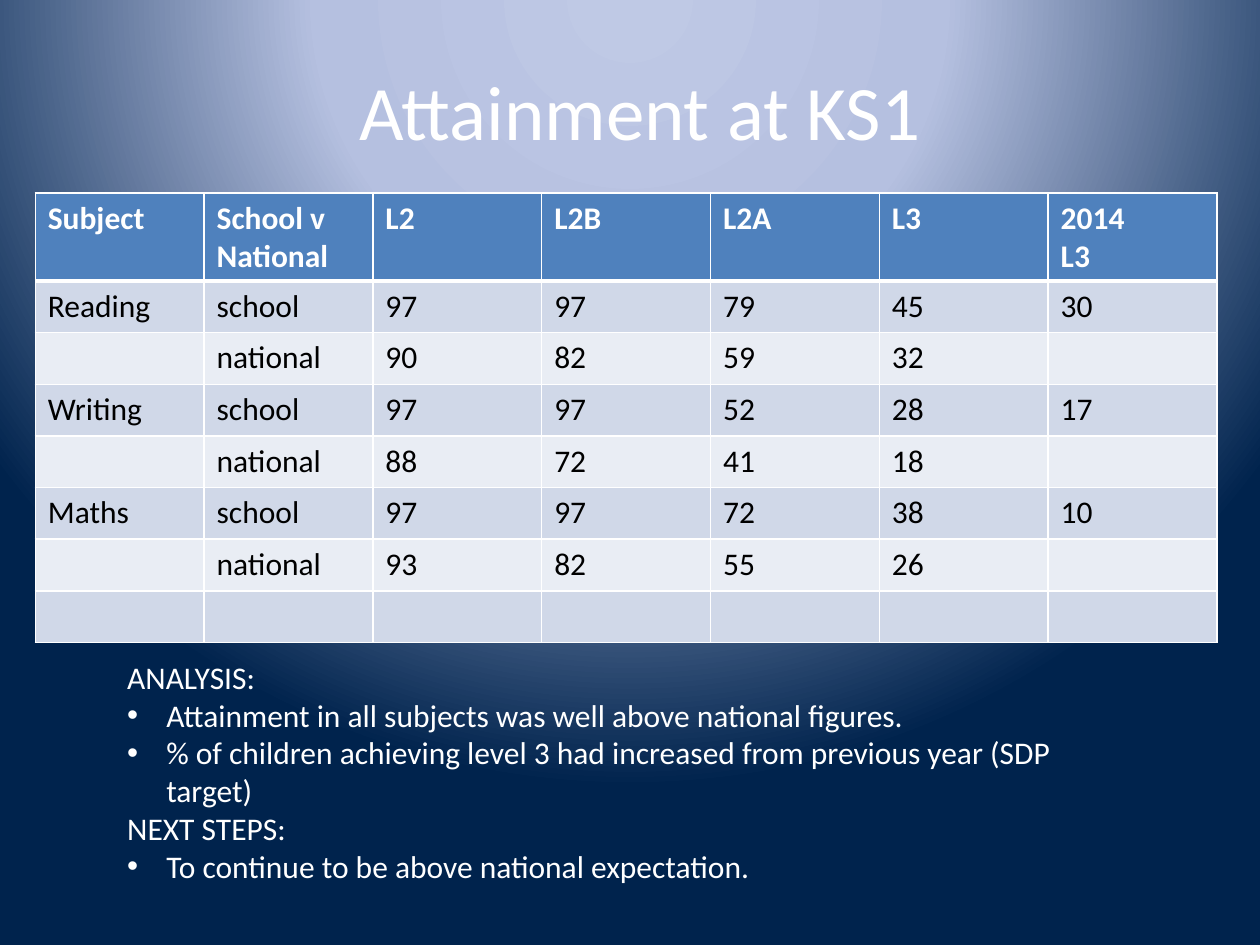
from lxml import etree
from pptx import Presentation
from pptx.dml.color import RGBColor
from pptx.enum import text
from pptx.oxml import parse_xml
from pptx.oxml.ns import nsdecls, qn
from pptx.util import Inches, Pt

COLORS = {
    "white": "FFFFFF", "black": "000000", "header": "4F81BD",
    "band_dark": "D0D8E8", "band_light": "E9EDF4",
    "glow": "BFC9E5", "mid": "B5C0E0", "navy": "00234D",
}

HEADER = ["Subject", "School v National", "L2", "L2B", "L2A", "L3", "2014\nL3"]
RESULTS = [
    ["Reading", "school", "97", "97", "79", "45", "30"],
    ["", "national", "90", "82", "59", "32", ""],
    ["Writing", "school", "97", "97", "52", "28", "17"],
    ["", "national", "88", "72", "41", "18", ""],
    ["Maths", "school", "97", "97", "72", "38", "10"],
    ["", "national", "93", "82", "55", "26", ""],
    [""] * 7,
]
NOTES = [
    ("ANALYSIS:", False),
    ("Attainment in all subjects was well above national figures.", True),
    ("% of children achieving level 3 had increased from previous year "
     "(SDP target)", True),
    ("NEXT STEPS:", False),
    ("To continue to be above national expectation.", True),
]


def write(p, words, size=18, color="white", bold=False, align=None, font="Calibri"):
    """Add one formatted run to a paragraph."""
    if align is not None:
        p.alignment = align
    r = p.add_run()
    r.text = words
    r.font.name, r.font.size, r.font.bold = font, Pt(size), bold
    r.font.color.rgb = RGBColor.from_string(COLORS[color])


def paragraphs(tf, count):
    """Yield the first paragraph of a text frame, then new ones."""
    for i in range(count):
        yield tf.add_paragraph() if i else tf.paragraphs[0]


class SlideBuilder:
    def __init__(self, prs):
        self.s = prs.slides.add_slide(prs.slide_layouts[1])

    def background(self, stops):
        gs = "".join(f'<a:gs pos="{pos * 1000}"><a:srgbClr val="{COLORS[c]}"/></a:gs>'
                     for pos, c in stops)
        bg = parse_xml(
            f'<p:bg {nsdecls("p", "a")}><p:bgPr><a:gradFill rotWithShape="1">'
            f'<a:gsLst>{gs}</a:gsLst><a:path path="circle">'
            '<a:fillToRect l="50000" t="-80000" r="50000" b="180000"/></a:path>'
            '</a:gradFill><a:effectLst/></p:bgPr></p:bg>')
        self.s._element.cSld.insert(0, bg)

    def place(self, sp, left, top, width, height):
        sp.left, sp.top = Inches(left), Inches(top)
        sp.width, sp.height = Inches(width), Inches(height)
        sp.text_frame.word_wrap = True
        return sp.text_frame

    def title(self, words, *box):
        tf = self.place(self.s.shapes.title, *box)
        tf.vertical_anchor = text.MSO_ANCHOR.MIDDLE
        write(tf.paragraphs[0], words, size=44, align=text.PP_ALIGN.CENTER)

    def notes(self, items, *box):
        tf = self.place(self.s.placeholders[1], *box)
        tf.auto_size = text.MSO_AUTO_SIZE.SHAPE_TO_FIT_TEXT
        tf.vertical_anchor = text.MSO_ANCHOR.TOP
        for p, (words, bulleted) in zip(paragraphs(tf, len(items)), items):
            indent = Inches(0.31) if bulleted else 0
            pPr = p._p.get_or_add_pPr()
            pPr.set("marL", str(indent))
            pPr.set("indent", str(-indent))
            if bulleted:
                etree.SubElement(pPr, qn("a:buFont"), typeface="Arial")
                etree.SubElement(pPr, qn("a:buChar"), char="•")
            else:
                etree.SubElement(pPr, qn("a:buNone"))
            p.space_before = Pt(0)
            write(p, words, align=text.PP_ALIGN.LEFT)

    def borders(self, cell, top, bottom):
        tcPr = cell._tc.get_or_add_tcPr()
        for side, width in (("L", 1), ("R", 1), ("T", top), ("B", bottom)):
            tcPr.append(parse_xml(
                f'<a:ln{side} {nsdecls("a")} w="{Pt(width)}"><a:solidFill>'
                f'<a:srgbClr val="{COLORS["white"]}"/></a:solidFill></a:ln{side}>'))

    def cell(self, cell, words, fill, top=1, bottom=1, **style):
        self.borders(cell, top, bottom)
        cell.fill.solid()
        cell.fill.fore_color.rgb = RGBColor.from_string(COLORS[fill])
        lines = words.split("\n") if words else []
        for p, line in zip(paragraphs(cell.text_frame, len(lines)), lines):
            write(p, line, **style)

    def table(self, header, rows, left, top, col_width, header_height, row_height):
        n_rows, n_cols = len(rows) + 1, len(header)
        table = self.s.shapes.add_table(
            n_rows, n_cols, Inches(left), Inches(top), Inches(col_width * n_cols),
            Inches(header_height + row_height * len(rows))).table
        for col in table.columns:
            col.width = Inches(col_width)
        for i, row in enumerate([header] + rows):
            table.rows[i].height = Inches(row_height if i else header_height)
            for j, words in enumerate(row):
                cell = table.cell(i, j)
                if i == 0:
                    self.cell(cell, words, "header", bottom=3, bold=True)
                else:
                    self.cell(cell, words, "band_dark" if i % 2 else "band_light",
                              top=3 if i == 1 else 1, color="black")


def main():
    prs = Presentation()
    prs.slide_width, prs.slide_height = Inches(10), Inches(7.5)
    slide = SlideBuilder(prs)

    # Background glow and title
    slide.background([(0, "glow"), (40, "mid"), (100, "navy")])
    slide.title("Attainment at KS1", 0.83, 0.36, 8.5, 1.02)

    # Results by subject
    slide.table(HEADER, RESULTS, 0.28, 1.53, col_width=1.34,
                header_height=0.7, row_height=0.41)

    # Analysis and next steps
    slide.notes(NOTES, 0.91, 5.17, 8.19, 1.92)

    prs.save("out.pptx")


if __name__ == "__main__":
    main()
